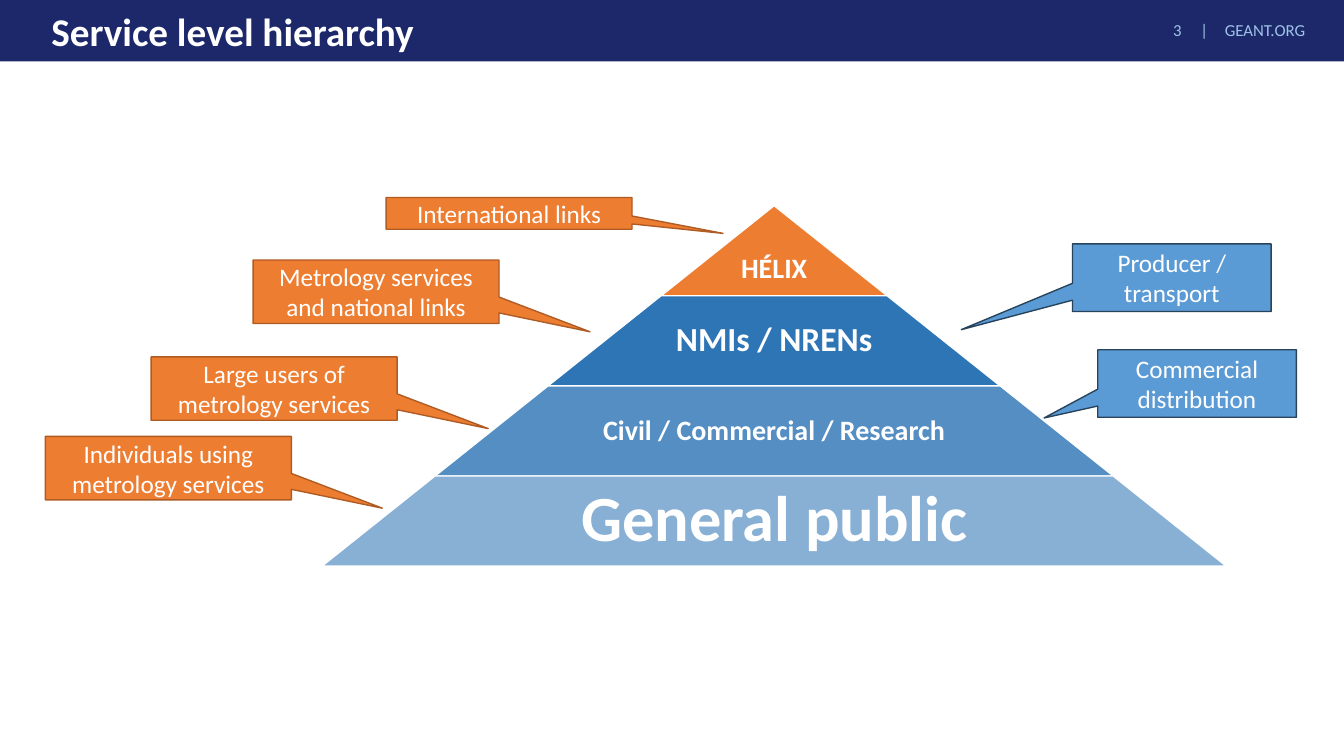
from dataclasses import dataclass

from lxml import etree
from pptx import Presentation
from pptx import util as u
from pptx.dml.color import RGBColor
from pptx.enum import shapes, text
from pptx.oxml.ns import qn


@dataclass(frozen=True)
class Theme:
    font: str = "Calibri"
    navy: str = "1D286B"
    pale: str = "9DC3E6"
    white: str = "FFFFFF"
    orange: str = "ED7D31"
    rust: str = "AF5C24"
    blue: str = "2E75B6"
    sky: str = "5B9BD5"
    slate: str = "28445D"
    title: int = 28
    public: int = 46
    network: int = 24
    level: int = 20
    callout: int = 18
    footer: int = 12


def write(tf, content, size, color, font, bold=False, align="LEFT",
          spacing=None, inset=None, tab=None):
    """Fill a text frame, one paragraph for each line of content."""
    tf.word_wrap = True
    tf.auto_size = text.MSO_AUTO_SIZE.NONE
    tf.vertical_anchor = text.MSO_ANCHOR.MIDDLE
    if inset is not None:
        tf.margin_left = tf.margin_right = u.Inches(inset)
        tf.margin_top = tf.margin_bottom = u.Inches(inset)
    for i, line in enumerate(content.split("\n")):
        p = tf.paragraphs[0] if i == 0 else tf.add_paragraph()
        p.alignment = text.PP_ALIGN[align]
        p.line_spacing = spacing
        if tab:
            tabs = etree.SubElement(p._p.get_or_add_pPr(), qn("a:tabLst"))
            etree.SubElement(tabs, qn("a:tab"), pos=str(u.Inches(tab)), algn="l")
        r = p.add_run()
        r.text = line
        r.font.name, r.font.size, r.font.bold = font, u.Pt(size), bold
        r.font.color.rgb = RGBColor.from_string(color)


class Deck:
    """Holds the theme and the slide; boxes are in percent of the slide."""

    def __init__(self, prs, theme):
        self.prs, self.t = prs, theme
        self.s = prs.slides.add_slide(prs.slide_layouts[5])

    def box(self, x, y, w, h):
        across, down = self.prs.slide_width / 100, self.prs.slide_height / 100
        return [u.Emu(round(v)) for v in (x * across, y * down, w * across, h * down)]

    def shape(self, kind, box, fill, line=None, adj=(), opacity=100):
        sp = self.s.shapes.add_shape(shapes.MSO_SHAPE[kind], *self.box(*box))
        sp.shadow.inherit = False
        for i, value in enumerate(adj):
            sp.adjustments[i] = value
        sp.fill.solid()
        sp.fill.fore_color.rgb = RGBColor.from_string(fill)
        if opacity < 100:
            color = sp.element.spPr.find(qn("a:solidFill"))[0]
            etree.SubElement(color, qn("a:alpha"), val=str(opacity * 1000))
        if line:
            sp.line.color.rgb = RGBColor.from_string(line)
            sp.line.width = u.Pt(1)
        else:
            sp.line.fill.background()
        return sp

    def label(self, content, box, size, color, **fmt):
        sp = self.s.shapes.add_textbox(*self.box(*box))
        write(sp.text_frame, content, size, color, self.t.font, **fmt)

    def title(self, content, box, band):
        sp = self.s.shapes.title
        sp.left, sp.top, sp.width, sp.height = self.box(*box)
        write(sp.text_frame, content, self.t.title, self.t.white, self.t.font,
              bold=True, spacing=0.9)
        # The band belongs behind the title
        sp.element.addprevious(self.shape("RECTANGLE", band, self.t.navy).element)

    def level(self, content, box, slope, fill, opacity, size, share, spacing, inset):
        x, y, w, h = box
        self.shape("TRAPEZOID", box, fill, self.t.white, [slope], opacity)
        self.label(content, (x + w * (1 - share) / 2, y, w * share, h), size,
                   self.t.white, bold=True, align="CENTER", spacing=spacing, inset=inset)

    def callout(self, content, box, tip, fill, line):
        sp = self.shape("RECTANGULAR_CALLOUT", box, fill, line, tip)
        write(sp.text_frame, content, self.t.callout, self.t.white, self.t.font,
              align="CENTER")


def main():
    prs = Presentation()
    prs.slide_width, prs.slide_height = u.Inches(13.33), u.Inches(7.5)
    t = Theme()
    deck = Deck(prs, t)

    # Header
    deck.title("Service level hierarchy", (3.08, 0, 81.15, 8.93), (0, 0, 100, 8.13))
    deck.label("3\t|", (86.55, 1.6, 4.2, 4.8), t.footer, t.pale, tab=0.27)
    deck.label("GEANT.ORG", (90.4, 2, 9.6, 4.27), t.footer, t.pale, spacing=0.9)

    # Pyramid: each level is wider than the one above by the same step
    center, top, height, step = 57.6, 27.2, 11.92, 8.41
    slope = step * prs.slide_width / (height * prs.slide_height)
    levels = [
        ("HÉLIX", t.orange, 100, t.level, 1, 2.0, 0.03),
        ("NMIs / NRENs", t.blue, 100, t.network, 0.65, 0.9, 0.03),
        ("Civil / Commercial / Research", t.blue, 81, t.level, 0.65, 0.9, 0.03),
        ("General public", t.blue, 57, t.public, 0.65, 0.9, 0.06),
    ]
    for i, (name, *style) in enumerate(levels):
        half = step * (i + 1)
        deck.level(name, (center - half, top + i * height, 2 * half, height),
                   slope, *style)

    # Services offered at each level
    services = [
        ("International links", 28.73, 26.13, 4.2),
        ("Metrology services\nand national links", 18.83, 34.4, 8.4),
        ("Large users of metrology services", 11.25, 47.2, 8.4),
        ("Individuals using metrology services", 3.38, 57.73, 8.4),
    ]
    for name, x, y, h in services:
        deck.callout(name, (x, y, 18.3, h), (0.87, 0.63), t.orange, t.rust)

    # Roles in the supply chain
    roles = [
        ("Producer / transport", 79.8, 32.27, (-1.06, 0.77)),
        ("Commercial distribution", 81.68, 46.27, (-0.77, 0.51)),
    ]
    for name, x, y, tip in roles:
        deck.callout(name, (x, y, 14.78, 8.93), tip, t.sky, t.slate)

    prs.save("out.pptx")


if __name__ == "__main__":
    main()
